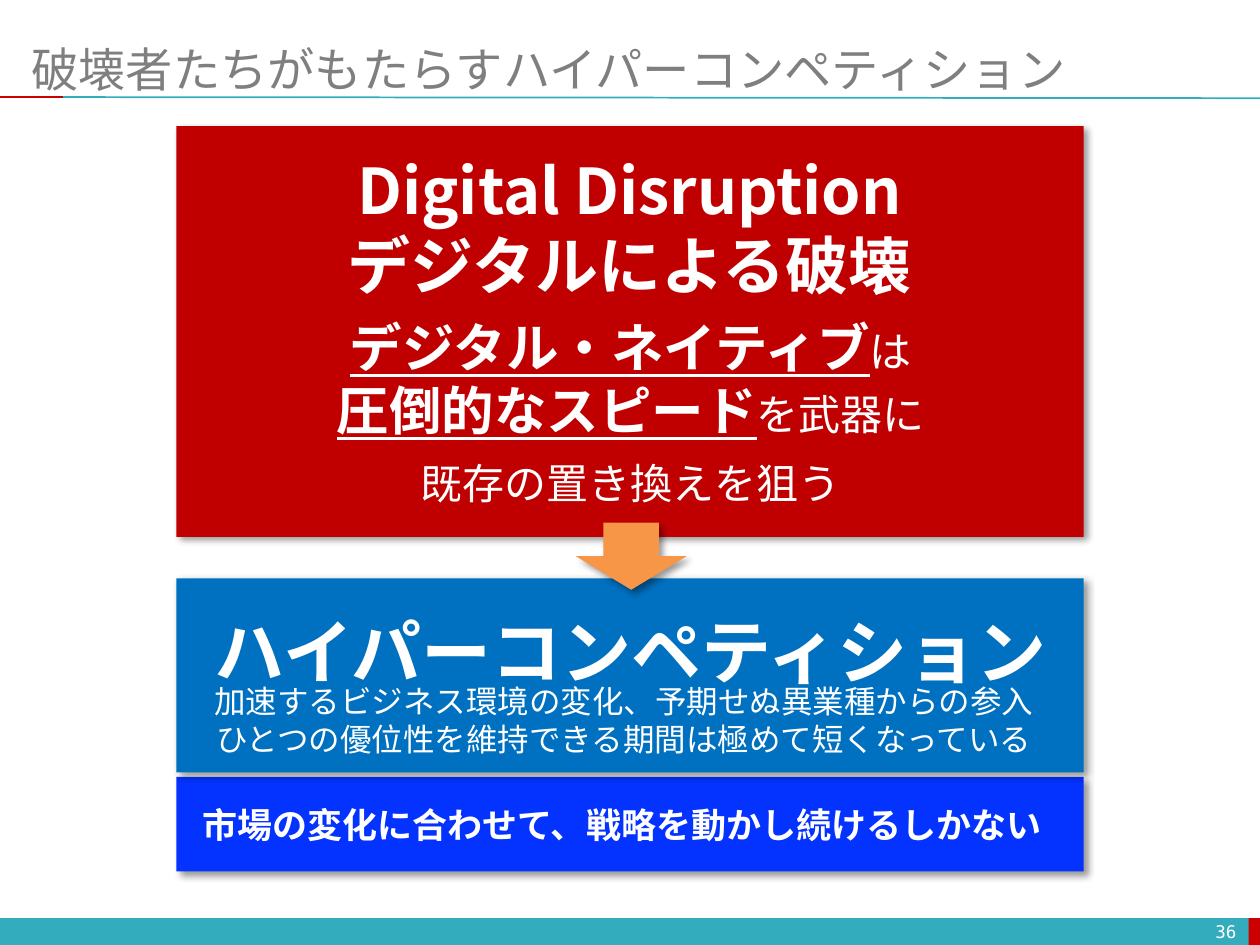
from lxml import etree
from pptx import Presentation
from pptx.dml.color import RGBColor
from pptx.enum.shapes import MSO_CONNECTOR, MSO_SHAPE
from pptx.enum.text import MSO_ANCHOR, PP_ALIGN
from pptx.oxml.ns import qn
from pptx.util import Pt

RECT, DOWN_ARROW = MSO_SHAPE.RECTANGLE, MSO_SHAPE.DOWN_ARROW
STRAIGHT = MSO_CONNECTOR.STRAIGHT
TOP, MIDDLE = MSO_ANCHOR.TOP, MSO_ANCHOR.MIDDLE
LEFT, CENTER, RIGHT = PP_ALIGN.LEFT, PP_ALIGN.CENTER, PP_ALIGN.RIGHT
JAPANESE, MONO = "Noto Sans CJK JP", "DejaVu Sans Mono"
COLORS = {
    "teal": "33ACBD", "accent": "CC0000", "title": "7F7F7F", "white": "FFFFFF",
    "disruption": "C00000", "competition": "0070C0", "strategy": "0432FF",
    "arrow": "F79646", "shadow": "000000",
}


def rgb(name):
    """Return the named colour."""
    return RGBColor.from_string(COLORS[name])


def add_block(slide, kind, box, color, shadowed=True):
    """Add a filled shape, with a soft drop shadow if wanted."""
    block = slide.shapes.add_shape(kind, *map(Pt, box))
    block.fill.solid()
    block.fill.fore_color.rgb = rgb(color)
    block.line.fill.background()
    block.shadow.inherit = False
    if shadowed:
        effects = block._element.spPr.find(qn("a:effectLst"))
        shadow = etree.SubElement(
            effects, qn("a:outerShdw"), blurRad=str(Pt(4)), dist=str(Pt(3)),
            dir=str(45 * 60000), algn="tl", rotWithShape="0")
        tint = etree.SubElement(shadow, qn("a:srgbClr"), val=COLORS["shadow"])
        etree.SubElement(tint, qn("a:alpha"), val="40000")


def add_rule(slide, start, end, color):
    """Add a thin line between two points."""
    rule = slide.shapes.add_connector(STRAIGHT, *map(Pt, start + end))
    rule.line.color.rgb = rgb(color)
    rule.line.width = Pt(1)
    etree.SubElement(rule._element.spPr, qn("a:effectLst"))


def add_text(slide, box, lines, size, color="white", bold=False, align=CENTER,
             anchor=TOP, font=JAPANESE, side=7.2, drop=0.06):
    """Add a text box with one paragraph per line, set 1.2 times its size apart."""
    frame = slide.shapes.add_textbox(*map(Pt, box)).text_frame
    frame.word_wrap = True
    frame.vertical_anchor = anchor
    frame.margin_left = frame.margin_right = Pt(side)
    frame.margin_top = Pt(round(3.6 + drop * size, 2))
    for index, line in enumerate(lines):
        paragraph = frame.paragraphs[0] if index == 0 else frame.add_paragraph()
        paragraph.text = line
        paragraph.alignment = align
        paragraph.line_spacing = Pt(1.2 * size)
        paragraph.font.size = Pt(size)
        paragraph.font.bold = bold
        paragraph.font.color.rgb = rgb(color)
        paragraph.font.name = font
        defaults = paragraph._p.pPr.find(qn("a:defRPr"))
        etree.SubElement(defaults, qn("a:ea"), typeface=font)
    return frame


def add_header(slide, left, top, width):
    """Place the slide title above its two-colour rule."""
    add_text(slide, (left + 18, top, width - 36, 33),
             ["破壊者たちがもたらすハイパーコンペティション"], 27, "title",
             align=LEFT, anchor=MIDDLE, side=0, drop=0.12)
    add_rule(slide, (left + 36, top + 34.6), (left + width, top + 35.2), "teal")
    add_rule(slide, (left, top + 34.6), (left + 36, top + 34.6), "accent")


def add_footer(slide, left, top, width, height):
    """Place the bottom band with the page number."""
    add_block(slide, RECT, (left, top, width, height), "teal", False)
    add_block(slide, RECT, (left + width - 6.5, top, 6.5, height), "accent", False)
    add_text(slide, (left + width - 174, top - 1, 167.5, 17), ["36"], 10,
             align=RIGHT, anchor=MIDDLE, font=MONO)


def add_disruption(slide, left, top, width, height):
    """Place the red panel about digital disruption."""
    add_block(slide, RECT, (left, top, width, height), "disruption")
    add_text(slide, (left + 83, top + 8.6, 352, 94),
             ["Digital Disruption", "デジタルによる破壊"], 36, bold=True)
    natives = add_text(slide, (left + 0.5, top + 103, width, 121), ["", "", "既存の置き換えを狙う"], 24)
    phrases = [("デジタル・ネイティブ", "は"), ("圧倒的なスピード", "を武器に")]
    for paragraph, (stressed, rest) in zip(natives.paragraphs, phrases):
        paragraph.line_spacing = Pt(36)
        emphasis = paragraph.add_run()
        emphasis.text = stressed
        emphasis.font.size = Pt(30)
        emphasis.font.bold = emphasis.font.underline = True
        paragraph.add_run().text = rest
    natives.paragraphs[-1].space_before = Pt(9.6)


def add_competition(slide, left, top, width, height):
    """Place the blue panel about hypercompetition."""
    add_block(slide, RECT, (left, top, width, height), "competition")
    add_text(slide, (left - 3.6, top + 54.7, width, 51),
             ["加速するビジネス環境の変化、予期せぬ異業種からの参入",
              "ひとつの優位性を維持できる期間は極めて短くなっている"], 18)
    add_text(slide, (left + 0.5, top + 11.5, width, 55.4),
             ["ハイパーコンペティション"], 40, bold=True)


def add_strategy(slide, left, top, width, height):
    """Place the conclusion panel."""
    add_block(slide, RECT, (left, top, width, height), "strategy")
    add_text(slide, (left - 2.2, top + 10.1, width, 31.7),
             ["市場の変化に合わせて、戦略を動かし続けるしかない "], 20, bold=True)


def main():
    """Build and save the slide."""
    deck = Presentation()
    deck.slide_width, deck.slide_height = Pt(720), Pt(540)
    slide = deck.slides.add_slide(deck.slide_layouts[6])
    left, width = 100.8, 518.4
    add_footer(slide, 0, 524.6, 720, 15.6)
    add_header(slide, 0, 20.9, 720)
    add_strategy(slide, left, 444, width, 54)
    add_disruption(slide, left, 72, width, 234.8)
    add_competition(slide, left, 330.5, width, 110.9)
    add_block(slide, DOWN_ARROW, (329, 298.6, 63.4, 38.4), "arrow")
    deck.save("out.pptx")


if __name__ == "__main__":
    main()
